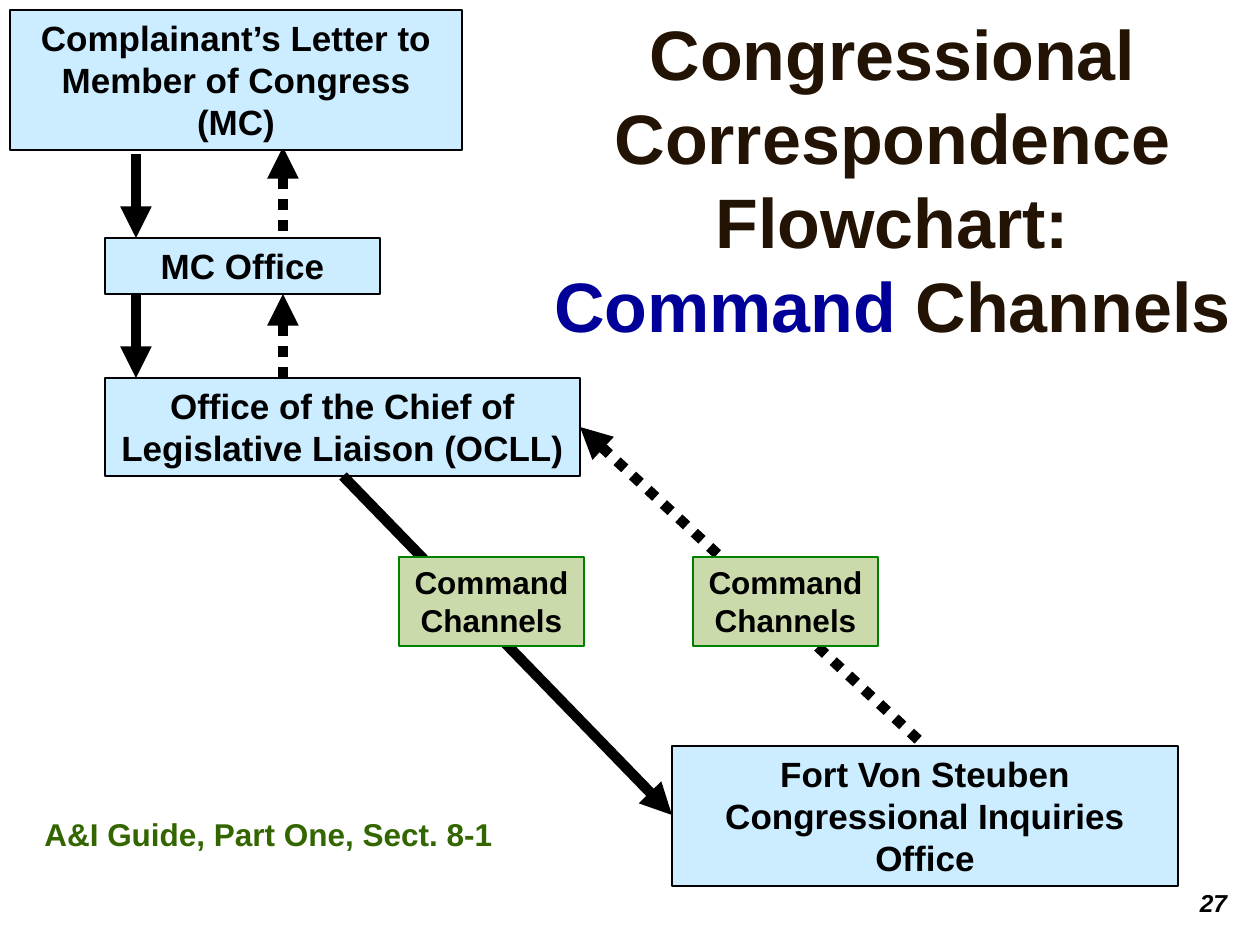
from lxml import etree
from pptx import Presentation
from pptx.dml.color import RGBColor
from pptx.enum.dml import MSO_LINE
from pptx.enum.shapes import MSO_CONNECTOR, MSO_SHAPE
from pptx.enum.text import MSO_ANCHOR, PP_ALIGN
from pptx.oxml.ns import qn
from pptx.util import Pt

PX = 914400 / 126
RECT = MSO_SHAPE.RECTANGLE
LINE = MSO_CONNECTOR.STRAIGHT
DOTS = MSO_LINE.ROUND_DOT
MID = MSO_ANCHOR.MIDDLE
TOP = MSO_ANCHOR.TOP
LEFT = PP_ALIGN.LEFT
MIDDLE = PP_ALIGN.CENTER
BLACK = RGBColor(0x00, 0x00, 0x00)
BROWN = RGBColor(0x22, 0x13, 0x04)
NAVY = RGBColor(0x00, 0x00, 0x99)
SKY = RGBColor(0xCC, 0xEC, 0xFF)
SAGE = RGBColor(0xCA, 0xDA, 0xAA)
GREEN = RGBColor(0x00, 0x80, 0x00)
MOSS = RGBColor(0x33, 0x66, 0x00)

deck = Presentation()
deck.slide_width = round(1260 * PX)
deck.slide_height = round(945 * PX)
slide = deck.slides.add_slide(deck.slide_layouts[6])
shapes = slide.shapes


def add_text(spot, text, size, color=BLACK, align=MIDDLE, fill=None, edge=None):
    area = [round(n * PX) for n in spot]
    if fill is None:
        box = shapes.add_textbox(*area)
    else:
        box = shapes.add_shape(RECT, *area)
        box.shadow.inherit = False
        box.fill.solid()
        box.fill.fore_color.rgb = fill
        box.line.color.rgb = edge
        box.line.width = Pt(0.75)
    frame = box.text_frame
    frame.word_wrap = True
    frame.vertical_anchor = TOP
    frame.text = text
    for para in frame.paragraphs:
        para.alignment = align
        for run in para.runs:
            run.font.name = "Arial"
            run.font.size = Pt(size)
            run.font.bold = True
            run.font.color.rgb = color
    return frame


def add_arrow(x1, y1, x2, y2, dash=None, end="a:tailEnd"):
    line = shapes.add_connector(LINE, *[round(n * PX) for n in (x1, y1, x2, y2)])
    line.line.color.rgb = BLACK
    line.line.width = Pt(6)
    if dash:
        line.line.dash_style = dash
    props = line.line._get_or_add_ln()
    etree.SubElement(props, qn(end)).set("type", "triangle")
    etree.SubElement(line._element.spPr, qn("a:effectLst"))


add_arrow(283, 231, 283, 147, DOTS)

title = add_text((525, 21, 735, 315), "Congressional Correspondence Flowchart:\v",
                 40, BROWN)
title.vertical_anchor = MID
for word, color in (("Command", NAVY), (" Channels", BROWN)):
    run = title.paragraphs[0].add_run()
    run.text = word
    run.font.name = "Arial"
    run.font.size = Pt(40)
    run.font.bold = True
    run.font.color.rgb = color

for spot, text in (
    ((10, 10, 452, 140), "Complainant’s Letter to Member of Congress (MC)"),
    ((672, 746, 506, 140), "Fort Von Steuben\nCongressional Inquiries Office"),
    ((105, 378, 475, 98), "Office of the Chief of Legislative Liaison (OCLL)"),
    ((105, 238, 275, 56), "MC Office"),
):
    add_text(spot, text, 20, fill=SKY, edge=BLACK)

for top in (154, 294):
    add_arrow(136, top, 136, top + 84)
add_arrow(283, 378, 283, 294, DOTS)
add_arrow(580, 427, 925, 746, DOTS, "a:headEnd")
add_arrow(343, 476, 672, 815)

for left in (693, 399):
    add_text((left, 557, 185, 89), "Command Channels", 18, fill=SAGE, edge=GREEN)

add_text((32, 809, 577, 50), "A&I Guide, Part One, Sect. 8-1", 18, MOSS, LEFT)
page = add_text((1187, 882, 53, 42), "27", 14)
page.word_wrap = False
page.paragraphs[0].runs[0].font.italic = True

deck.save("out.pptx")
